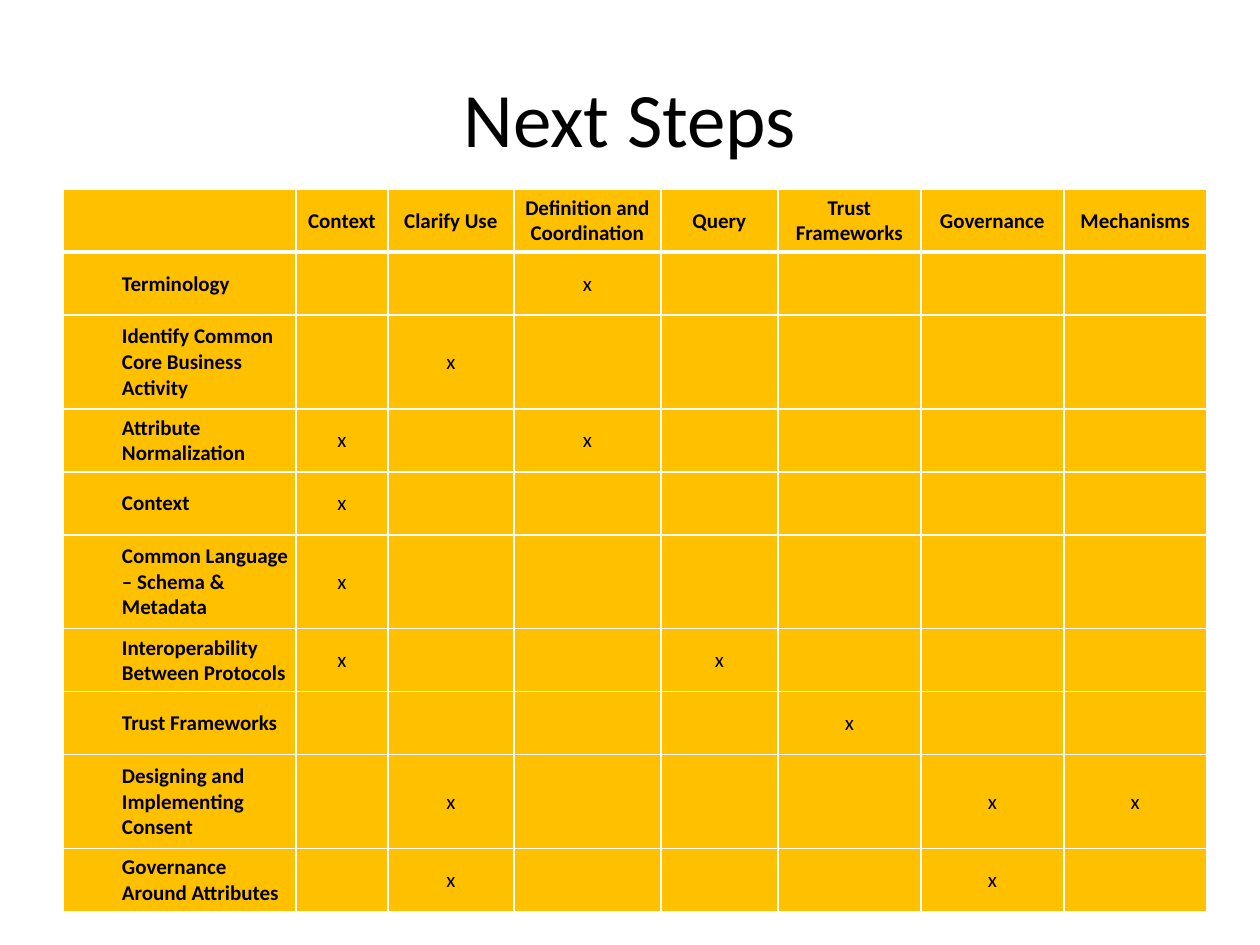
from dataclasses import dataclass

from lxml.etree import SubElement
from pptx import Presentation
from pptx.dml.color import RGBColor
from pptx.enum.text import MSO_ANCHOR, PP_ALIGN
from pptx.oxml.ns import qn
from pptx.util import Emu, Pt

PX = 914400 // 126


@dataclass(frozen=True)
class Theme:
    font: str = "Calibri"
    text: str = "000000"
    fill: str = "FFC000"
    border: str = "FFFFFF"
    title_size: int = 44
    table_size: int = 12
    thin_border: int = 1
    header_border: int = 3


theme = Theme()


def write(frame, text, size=theme.table_size, bold=False, align=PP_ALIGN.CENTER):
    paragraph = frame.paragraphs[0]
    paragraph.alignment = align
    run = paragraph.add_run()
    run.text = text
    run.font.name = theme.font
    run.font.size = Pt(size)
    run.font.bold = bold
    run.font.color.rgb = RGBColor.from_string(theme.text)


def set_borders(cell, top, bottom):
    """Draw all four borders; call before the fill, which must follow them in the XML."""
    properties = cell._tc.get_or_add_tcPr()
    thin = theme.thin_border
    for side, width in (("L", thin), ("R", thin), ("T", top), ("B", bottom)):
        line = SubElement(properties, qn(f"a:ln{side}"), w=str(Pt(width)))
        solid = SubElement(line, qn("a:solidFill"))
        SubElement(solid, qn("a:srgbClr"), val=theme.border)


headings = ["", "Context", "Clarify Use", "Definition and Coordination", "Query",
            "Trust Frameworks", "Governance", "Mechanisms"]
column_widths = [233, 92, 126, 147, 117, 143, 143, 143]
row_height, tall_row_height = 63, 94

# Each step: label, row height, headings it is marked under
steps = [
    ("Terminology", row_height, ["Definition and Coordination"]),
    ("Identify Common Core Business Activity", tall_row_height, ["Clarify Use"]),
    ("Attribute Normalization", row_height, ["Context", "Definition and Coordination"]),
    ("Context", row_height, ["Context"]),
    ("Common Language – Schema & Metadata", tall_row_height, ["Context"]),
    ("Interoperability Between Protocols", row_height, ["Context", "Query"]),
    ("Trust Frameworks", row_height, ["Trust Frameworks"]),
    ("Designing and Implementing Consent", tall_row_height,
     ["Clarify Use", "Governance", "Mechanisms"]),
    ("Governance Around Attributes", row_height, ["Clarify Use", "Governance"]),
]

rows = [headings]
row_heights = [row_height]
for label, height, marked in steps:
    rows.append([label] + ["x" if heading in marked else "" for heading in headings[1:]])
    row_heights.append(height)

presentation = Presentation()
presentation.slide_width = Emu(1260 * PX)
presentation.slide_height = Emu(945 * PX)
slide = presentation.slides.add_slide(presentation.slide_layouts[5])

title = slide.shapes.title
title.left, title.top, title.width, title.height = (
    Emu(length * PX) for length in (63, 38, 1134, 157))
title.text_frame.vertical_anchor = MSO_ANCHOR.MIDDLE
write(title.text_frame, "Next Steps", size=theme.title_size)

table = slide.shapes.add_table(
    len(rows), len(headings), Emu(63 * PX), Emu(189 * PX),
    Emu(sum(column_widths) * PX), Emu(sum(row_heights) * PX)).table
for column, width in zip(table.columns, column_widths):
    column.width = Emu(width * PX)
for row, height in zip(table.rows, row_heights):
    row.height = Emu(height * PX)

for row_index, texts in enumerate(rows):
    is_header = row_index == 0
    top = theme.header_border if row_index == 1 else theme.thin_border
    bottom = theme.header_border if is_header else theme.thin_border
    for column_index, text in enumerate(texts):
        is_label = column_index == 0
        cell = table.cell(row_index, column_index)
        set_borders(cell, top, bottom)
        cell.fill.solid()
        cell.fill.fore_color.rgb = RGBColor.from_string(theme.fill)
        if not text:
            continue
        cell.vertical_anchor = MSO_ANCHOR.MIDDLE
        cell.margin_left = Emu((59 if is_label else 1) * PX)
        cell.margin_right = cell.margin_top = Emu(PX)
        cell.margin_bottom = Emu(0)
        write(cell.text_frame, text, bold=is_header or is_label,
              align=PP_ALIGN.LEFT if is_label else PP_ALIGN.CENTER)

presentation.save("out.pptx")
